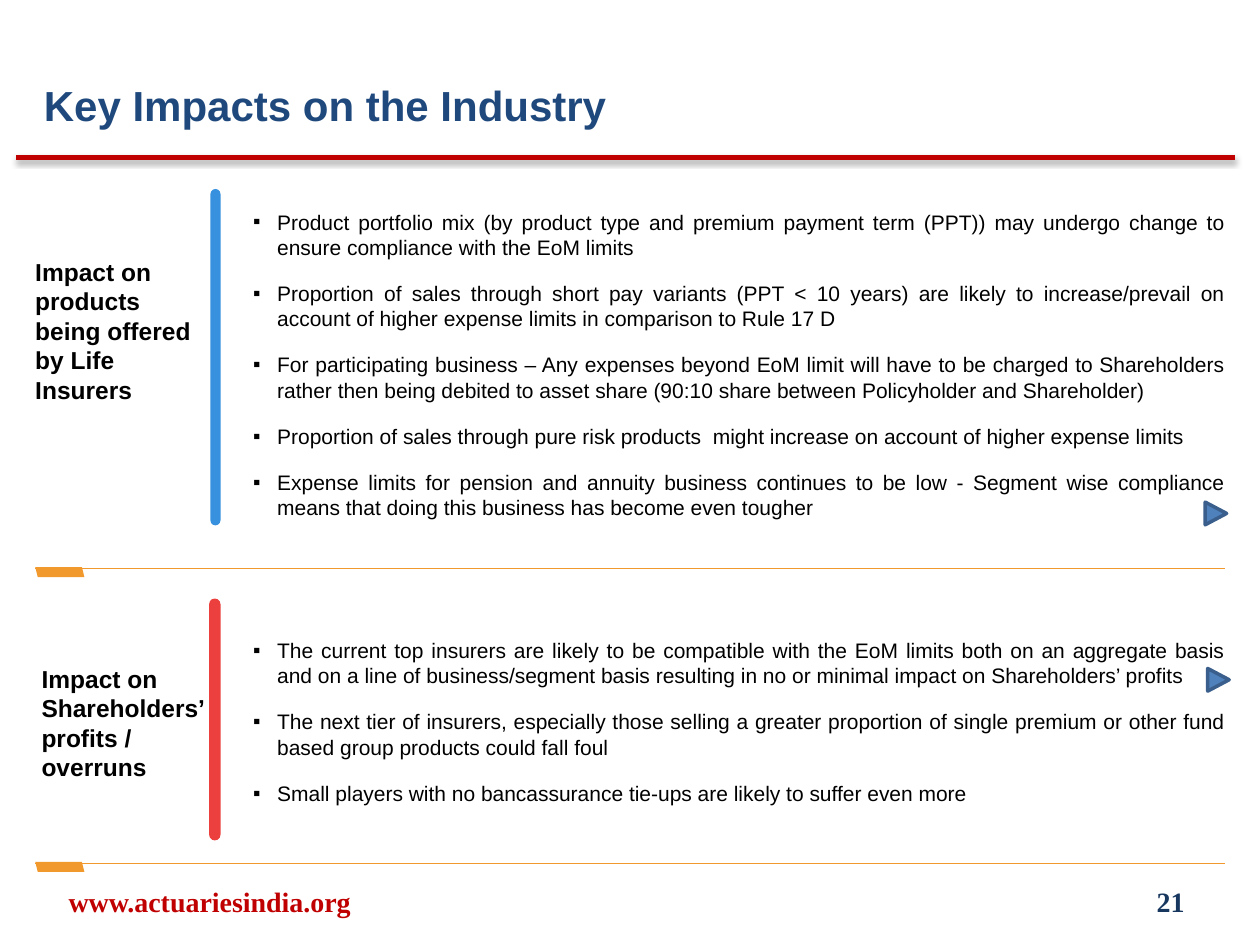
from lxml import etree
from pptx import Presentation
from pptx import util as u
from pptx.dml.color import RGBColor
from pptx.enum import shapes, text
from pptx.oxml.ns import qn

THEME = {
    "color": {"title": "1F497D", "red": "C00000", "navy": "17375E", "ink": "000000",
              "orange": "F1992D", "blue_bar": "3891DE", "red_bar": "EB403D",
              "arrow": "4F81BD", "arrow_line": "3A5F8C"},
    "size": {"title": 24, "footer": 16, "label": 14, "body": 12},
    "sans": "Arial", "serif": "Times New Roman",
}
C = {name: RGBColor.from_string(value) for name, value in THEME["color"].items()}
SIZE = {name: u.Pt(value) for name, value in THEME["size"].items()}
AL = text.PP_ALIGN
GROW = text.MSO_AUTO_SIZE.SHAPE_TO_FIT_TEXT
MID = text.MSO_ANCHOR.MIDDLE

FONTS = {
    "title": {"name": THEME["sans"], "size": SIZE["title"], "bold": True},
    "footer": {"name": THEME["serif"], "size": SIZE["footer"], "bold": True},
    "label": {"name": THEME["sans"], "size": SIZE["label"], "bold": True},
    "body": {"name": THEME["sans"], "size": SIZE["body"], "bold": False},
}

prs = Presentation()
prs.slide_width, prs.slide_height = u.Inches(10), u.Inches(7.5)
s = prs.slides.add_slide(prs.slide_layouts[6])


def add_text(box, paragraphs, style, color, frame, align=AL.LEFT, bullet=None):
    tf = s.shapes.add_textbox(*map(u.Inches, box)).text_frame
    for name, value in {"word_wrap": True, **frame}.items():
        setattr(tf, name, value)
    for i, line in enumerate(paragraphs):
        p = tf.paragraphs[0] if i == 0 else tf.add_paragraph()
        p.alignment = align
        if bullet:
            p.space_before, p.space_after = u.Pt(6 if i else 0), u.Pt(6)
            pPr = p._p.get_or_add_pPr()
            pPr.set("marL", str(u.Inches(0.19)))
            pPr.set("indent", str(u.Inches(-0.19)))
            etree.SubElement(pPr, qn("a:buFont"), typeface=THEME["sans"])
            etree.SubElement(pPr, qn("a:buChar"), char=bullet)
        r = p.add_run()
        r.text = line
        for name, value in FONTS[style].items():
            setattr(r.font, name, value)
        r.font.color.rgb = C[color]


def add_line(x1, x2, y, color, width):
    sp = s.shapes.add_connector(shapes.MSO_CONNECTOR.STRAIGHT, *map(u.Inches, (x1, y, x2, y)))
    sp.line.color.rgb, sp.line.width = C[color], u.Pt(width)
    return etree.SubElement(sp._element.spPr, qn("a:effectLst"))


effects = add_line(0.13, 9.8, 1.25, "red", 3)
shadow = etree.SubElement(effects, qn("a:outerShdw"), blurRad=str(u.Pt(3.1)),
                          dist=str(u.Pt(1.6)), dir="5400000", rotWithShape="0")
clr = etree.SubElement(shadow, qn("a:srgbClr"), val="000000")
etree.SubElement(clr, qn("a:alpha"), val="38000")

add_text((0.25, 0.58, 8.25, 0.67), ["Key Impacts on the Industry"], "title", "title", {})
add_text((0.08, 6.95, 3.17, 0.4), ["www.actuariesindia.org"], "footer", "red",
         {"vertical_anchor": MID}, AL.CENTER)
add_text((7.17, 6.95, 2.33, 0.4), ["21"], "footer", "navy", {"vertical_anchor": MID}, AL.RIGHT)

sections = [
    {"label": "Impact on products being offered by Life Insurers",
     "label_box": (0.2, 2, 1.47, 1.26), "body_box": (1.83, 1.57, 8.08, 2.67),
     "bar": (1.67, 1.5, 0.08, 2.67), "bar_color": "blue_bar", "rule_y": 4.51,
     "arrow": (9.56, 3.99),
     "points": [
         "Product portfolio mix (by product type and premium payment term (PPT)) may undergo change to ensure compliance with the EoM limits",
         "Proportion of sales through short pay variants (PPT < 10 years) are likely to increase/prevail on account of higher expense limits in comparison to Rule 17 D",
         "For participating business – Any expenses beyond EoM limit will have to be charged to Shareholders rather then being debited to asset share (90:10 share between Policyholder and Shareholder)",
         "Proportion of sales through pure risk products  might increase on account of higher expense limits",
         "Expense limits for pension and annuity business continues to be low - Segment wise compliance means that doing this business has become even tougher",
     ]},
    {"label": "Impact on Shareholders’ profits / overruns",
     "label_box": (0.25, 5.23, 1.47, 1.02), "body_box": (1.83, 4.97, 8.08, 1.53),
     "bar": (1.66, 4.75, 0.09, 1.92), "bar_color": "red_bar", "rule_y": 6.85,
     "arrow": (9.58, 5.31),
     "points": [
         "The current top insurers are likely to be compatible with the EoM limits both on an aggregate basis and on a line of business/segment basis resulting in no or minimal impact on Shareholders’ profits",
         "The next tier of insurers, especially those selling a greater proportion of single premium or other fund based group products could fall foul",
         "Small players with no bancassurance tie-ups are likely to suffer even more",
     ]},
]
insets = {
    name: {"auto_size": GROW, "margin_left": u.Inches(x), "margin_right": u.Inches(x),
           "margin_top": u.Inches(y), "margin_bottom": u.Inches(y)}
    for name, x, y in (("label", 0.08, 0.04), ("body", 0.18, 0.09))
}
SHAPE = shapes.MSO_SHAPE

for sec in sections:
    add_text(sec["body_box"], sec["points"], "body", "ink", insets["body"], AL.JUSTIFY, "▪")
    add_text(sec["label_box"], [sec["label"]], "label", "ink", insets["label"])
    add_line(9.72, 0.28, sec["rule_y"], "orange", 0.5)
    for kind, box, fill in (
        (SHAPE.PARALLELOGRAM, (0.28, sec["rule_y"] - 0.01, 0.39, 0.08), "orange"),
        (SHAPE.ROUND_2_SAME_RECTANGLE, sec["bar"], sec["bar_color"]),
        (SHAPE.ISOSCELES_TRIANGLE, (*sec["arrow"], 0.18, 0.17), "arrow"),
    ):
        sp = s.shapes.add_shape(kind, *map(u.Inches, box))
        sp.shadow.inherit = False
        sp.fill.solid()
        sp.fill.fore_color.rgb = C[fill]
        if kind == SHAPE.ISOSCELES_TRIANGLE:
            sp.rotation = 90
            sp.line.color.rgb, sp.line.width = C["arrow_line"], u.Pt(2)
        else:
            sp.line.fill.background()
        if kind == SHAPE.PARALLELOGRAM:
            sp._element.spPr.xfrm.set("flipH", "1")
        if kind == SHAPE.ROUND_2_SAME_RECTANGLE:
            sp.adjustments[0] = sp.adjustments[1] = 0.5

prs.save("out.pptx")
